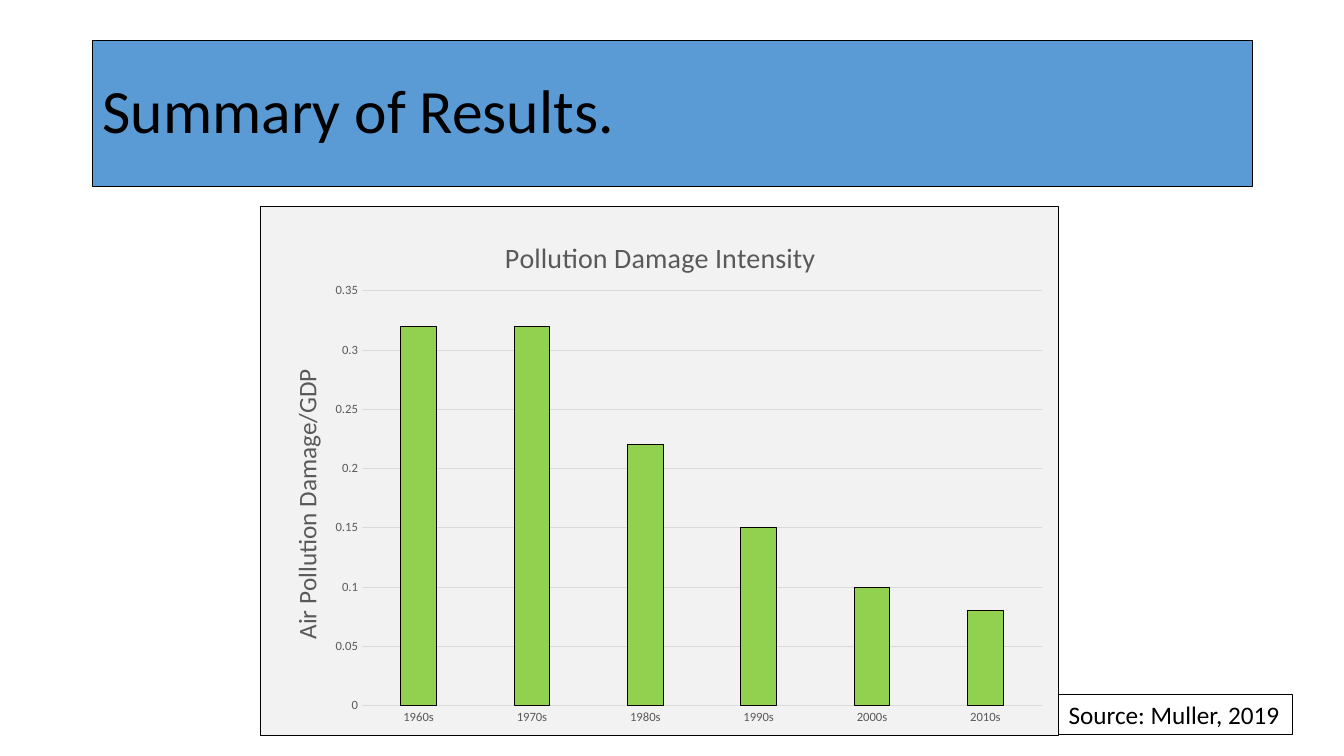
from lxml.etree import SubElement, fromstring
from pptx import Presentation
from pptx.chart.data import CategoryChartData
from pptx.dml.color import RGBColor
from pptx.enum.chart import XL_CHART_TYPE, XL_TICK_MARK
from pptx.enum.shapes import MSO_SHAPE
from pptx.enum.text import MSO_ANCHOR, PP_ALIGN
from pptx.oxml.ns import nsdecls, qn
from pptx.util import Inches, Pt

WIDTH, HEIGHT = 13.33, 7.5
FONT = "Calibri"
BLACK, GREY, RULE = "000000", "595959", "D9D9D9"
DAMAGE_BY_DECADE = {
    "1960s": 0.32, "1970s": 0.32, "1980s": 0.22,
    "1990s": 0.15, "2000s": 0.1, "2010s": 0.08,
}


def color(hex_code):
    return RGBColor.from_string(hex_code)


def style_line(line, hex_code):
    line.color.rgb = color(hex_code)
    line.width = Pt(0.75)


def style_font(font, size, hex_code):
    font.name, font.size, font.bold = FONT, Pt(size), False
    font.color.rgb = color(hex_code)


def add_run(paragraph, text, size, hex_code):
    run = paragraph.add_run()
    run.text = text
    style_font(run.font, size, hex_code)


def add_panel(slide, box, text, size, fill=None, wrap=True, spacing=1.0):
    """Outlined rectangle with left-aligned text."""
    panel = slide.shapes.add_shape(MSO_SHAPE.RECTANGLE, *map(Inches, box))
    panel.shadow.inherit = False
    if fill:
        panel.fill.solid()
        panel.fill.fore_color.rgb = color(fill)
    else:
        panel.fill.background()
    style_line(panel.line, BLACK)
    frame = panel.text_frame
    frame.word_wrap = wrap
    frame.vertical_anchor = MSO_ANCHOR.MIDDLE
    paragraph = frame.paragraphs[0]
    paragraph.alignment = PP_ALIGN.LEFT
    paragraph.line_spacing = spacing
    add_run(paragraph, text, size, BLACK)


def place(element, index, inner=False, **shares):
    """Fix a chart part at shares of the chart's size."""
    layout = element.find(qn("c:layout"))
    if layout is not None:
        element.remove(layout)
    layout = element.makeelement(qn("c:layout"))
    element.insert(index, layout)
    manual = SubElement(layout, qn("c:manualLayout"))
    if inner:
        SubElement(manual, qn("c:layoutTarget"), val="inner")
    for side in ("x", "y"):
        SubElement(manual, qn(f"c:{side}Mode"), val="edge")
    for side, share in shares.items():
        SubElement(manual, qn(f"c:{side}"), val=str(share))


def add_heading(heading, text, size, x, y):
    add_run(heading.text_frame.paragraphs[0], text, size, GREY)
    place(heading._element, 1, x=x, y=y)


def style_axis(axis):
    axis.major_tick_mark = axis.minor_tick_mark = XL_TICK_MARK.NONE
    style_font(axis.tick_labels.font, 9, GREY)


def fill_chart_area(chart, fill, border):
    area = fromstring(
        f'<c:spPr {nsdecls("c", "a")}>'
        f'<a:solidFill><a:srgbClr val="{fill}"/></a:solidFill>'
        f'<a:ln w="{Pt(0.75)}"><a:solidFill><a:srgbClr val="{border}"/>'
        '</a:solidFill></a:ln></c:spPr>')
    chart._chartSpace.find(qn("c:chart")).addnext(area)


def add_damage_chart(slide, box):
    data = CategoryChartData()
    data.categories = list(DAMAGE_BY_DECADE)
    data.add_series("Series 1", list(DAMAGE_BY_DECADE.values()))
    chart = slide.shapes.add_chart(
        XL_CHART_TYPE.COLUMN_CLUSTERED, *map(Inches, box), data).chart
    style_font(chart.font, 10, BLACK)
    fill_chart_area(chart, "F2F2F2", BLACK)
    chart.has_legend = False

    # Columns
    plot = chart.plots[0]
    plot.gap_width, plot.overlap = 219, -27
    plot.vary_by_categories = False
    columns = plot.series[0].format
    columns.fill.solid()
    columns.fill.fore_color.rgb = color("92D050")
    style_line(columns.line, BLACK)

    # Axes
    decades, intensity = chart.category_axis, chart.value_axis
    for axis in (decades, intensity):
        style_axis(axis)
    style_line(decades.format.line, RULE)
    intensity.format.line.fill.background()
    style_line(intensity.major_gridlines.format.line, RULE)
    intensity.minimum_scale, intensity.maximum_scale = 0, 0.35
    intensity.major_unit = 0.05
    intensity.tick_labels.number_format = "General"
    intensity.tick_labels.number_format_is_linked = False

    # Headings and plot position
    chart.has_title = True
    add_heading(chart.chart_title, "Pollution Damage Intensity", 20, 0.3, 0.05)
    add_heading(intensity.axis_title, "Air Pollution Damage/GDP", 18, 0.03, 0.3)
    turned = intensity.axis_title.text_frame._txBody.find(qn("a:bodyPr"))
    turned.set("rot", "-5400000")
    turned.set("vert", "horz")
    plot_area = chart._chartSpace.find(qn("c:chart")).find(qn("c:plotArea"))
    place(plot_area, 0, inner=True, x=0.127, y=0.16, w=0.853, h=0.784)


def main():
    deck = Presentation()
    deck.slide_width, deck.slide_height = Inches(WIDTH), Inches(HEIGHT)
    slide = deck.slides.add_slide(deck.slide_layouts[6])

    # Title band
    add_panel(slide, (0.92, 0.4, 11.5, 1.45), "Summary of Results.", 44,
              fill="5B9BD5", spacing=0.9)

    # Source note, touching the chart's right edge
    chart_left, chart_width = 2.58, 7.92
    add_panel(slide, (chart_left + chart_width, 6.89, 2.32, 0.4),
              "Source: Muller, 2019", 18, wrap=False)

    # Chart
    add_damage_chart(slide, (chart_left, 2.04, chart_width, 5.26))
    deck.save("out.pptx")


if __name__ == "__main__":
    main()
